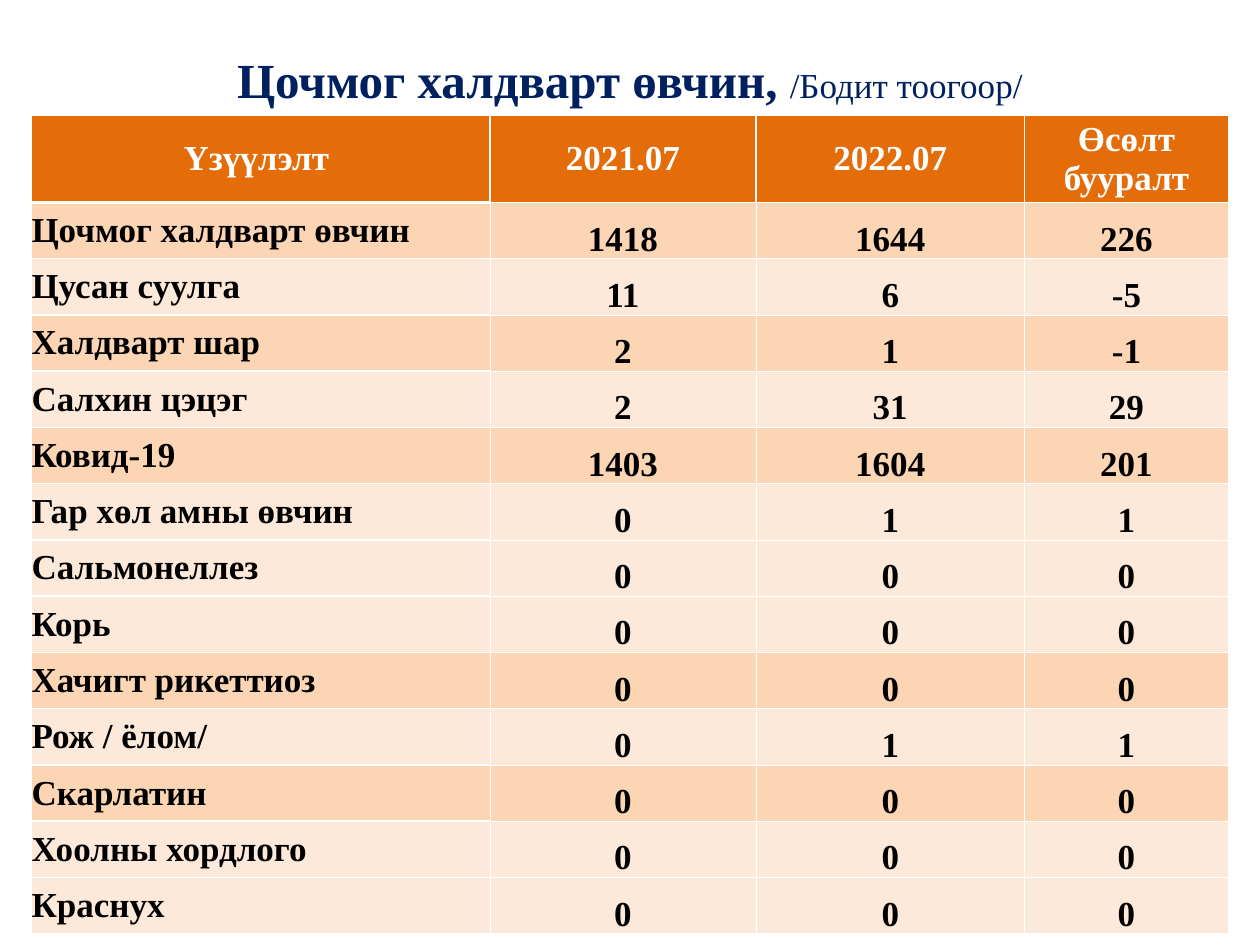
from lxml import etree
from pptx import Presentation
from pptx.dml.color import RGBColor
from pptx.enum.text import MSO_ANCHOR as Anchor, PP_ALIGN as Align
from pptx.oxml.ns import qn
from pptx.util import Pt

FONT = "Times New Roman"
COLORS = {
    "title": "002060",
    "header": "E46D0A",
    "dark": "FCD5B4",
    "light": "FDE9D9",
    "white": "FFFFFF",
    "black": "000000",
}
HEADINGS = ["Үзүүлэлт ", "2021.07", "2022.07", "Өсөлт бууралт"]
DISEASES = [
    ("Цочмог халдварт өвчин", 1418, 1644, "dark"),
    ("Цусан суулга", 11, 6, "light"),
    ("Халдварт шар", 2, 1, "dark"),
    ("Салхин цэцэг", 2, 31, "light"),
    ("Ковид-19", 1403, 1604, "dark"),
    ("Гар хөл амны өвчин", 0, 1, "light"),
    ("Сальмонеллез", 0, 0, "light"),
    ("Корь", 0, 0, "light"),
    ("Хачигт рикеттиоз", 0, 0, "dark"),
    ("Рож / ёлом/", 0, 1, "light"),
    ("Скарлатин", 0, 0, "dark"),
    ("Хоолны хордлого", 0, 0, "light"),
    ("Краснух", 0, 0, "light"),
]
COLUMN_WIDTHS = [262, 152, 153.5, 116.5]
HEADER_HEIGHT = 49.7
HEADER_BORDERS = {"L": 1, "R": 1, "T": 1, "B": 0.5}
CORNER_BORDERS = {"L": 1, "R": 1, "T": 1, "B": 1.5}
NAME_BORDERS = {"L": 1, "R": 0.5, "T": 1, "B": 1}
FIRST_NAME_BORDERS = {"L": 1, "R": 0.5, "T": 1.5, "B": 1}
VALUE_BORDERS = {"L": 0.5, "R": 0.5, "T": 0.5, "B": 0.5}


def add_run(p, text, size, color, bold=True):
    r = p.add_run()
    r.text = text
    for name, value in {"name": FONT, "size": Pt(size), "bold": bold}.items():
        setattr(r.font, name, value)
    r.font.color.rgb = RGBColor.from_string(COLORS[color])


def set_borders(cell, widths):
    tc_pr = cell._tc.get_or_add_tcPr()
    for i, (side, width) in enumerate(widths.items()):
        ln = etree.Element(qn(f"a:ln{side}"), w=str(int(Pt(width))))
        fill = etree.SubElement(ln, qn("a:solidFill"))
        etree.SubElement(fill, qn("a:srgbClr"), val=COLORS["white"])
        tc_pr.insert(i, ln)


def fill_cell(cell, text, fill, color, align, anchor, borders):
    layout = {"vertical_anchor": anchor, "margin_left": 0, "margin_right": 0,
              "margin_top": 0, "margin_bottom": 0}
    for name, value in layout.items():
        setattr(cell, name, value)
    cell.fill.solid()
    cell.fill.fore_color.rgb = RGBColor.from_string(COLORS[fill])
    p = cell.text_frame.paragraphs[0]
    p.alignment = align
    add_run(p, text, 20, color)
    set_borders(cell, borders)


def add_title(s, left, top, width, height):
    tf = s.shapes.add_textbox(Pt(left), Pt(top), Pt(width), Pt(height)).text_frame
    for name, value in {"word_wrap": True, "vertical_anchor": Anchor.MIDDLE}.items():
        setattr(tf, name, value)
    p = tf.paragraphs[0]
    p.alignment = Align.CENTER
    add_run(p, "Цочмог халдварт өвчин, ", 28, "title")
    add_run(p, "/Бодит тоогоор/", 20, "title", bold=False)


def add_disease_table(s, left, top, width, height):
    table = s.shapes.add_table(len(DISEASES) + 1, len(HEADINGS), Pt(left), Pt(top),
                               Pt(width), Pt(height)).table
    for column, share in zip(table.columns, COLUMN_WIDTHS):
        column.width = Pt(width * share / sum(COLUMN_WIDTHS))
    for row in table.rows:
        row.height = Pt((height - HEADER_HEIGHT) / len(DISEASES))
    table.rows[0].height = Pt(HEADER_HEIGHT)

    for col, heading in enumerate(HEADINGS):
        borders = HEADER_BORDERS if col else CORNER_BORDERS
        fill_cell(table.cell(0, col), heading, "header", "white",
                  Align.CENTER, Anchor.MIDDLE, borders)
    for row, (name, before, after, band) in enumerate(DISEASES, 1):
        borders = FIRST_NAME_BORDERS if row == 1 else NAME_BORDERS
        fill_cell(table.cell(row, 0), name, band, "black",
                  Align.LEFT, Anchor.MIDDLE, borders)
        for col, value in enumerate((before, after, after - before), 1):
            fill_cell(table.cell(row, col), str(value), band, "black",
                      Align.CENTER, Anchor.BOTTOM, VALUE_BORDERS)


def main():
    prs = Presentation()
    prs.slide_width, prs.slide_height = Pt(720), Pt(540)
    s = prs.slides.add_slide(prs.slide_layouts[6])
    add_title(s, 36, 18, 648, 54)
    add_disease_table(s, 18, 66, 684, 467.7)
    prs.save("out.pptx")


if __name__ == "__main__":
    main()
